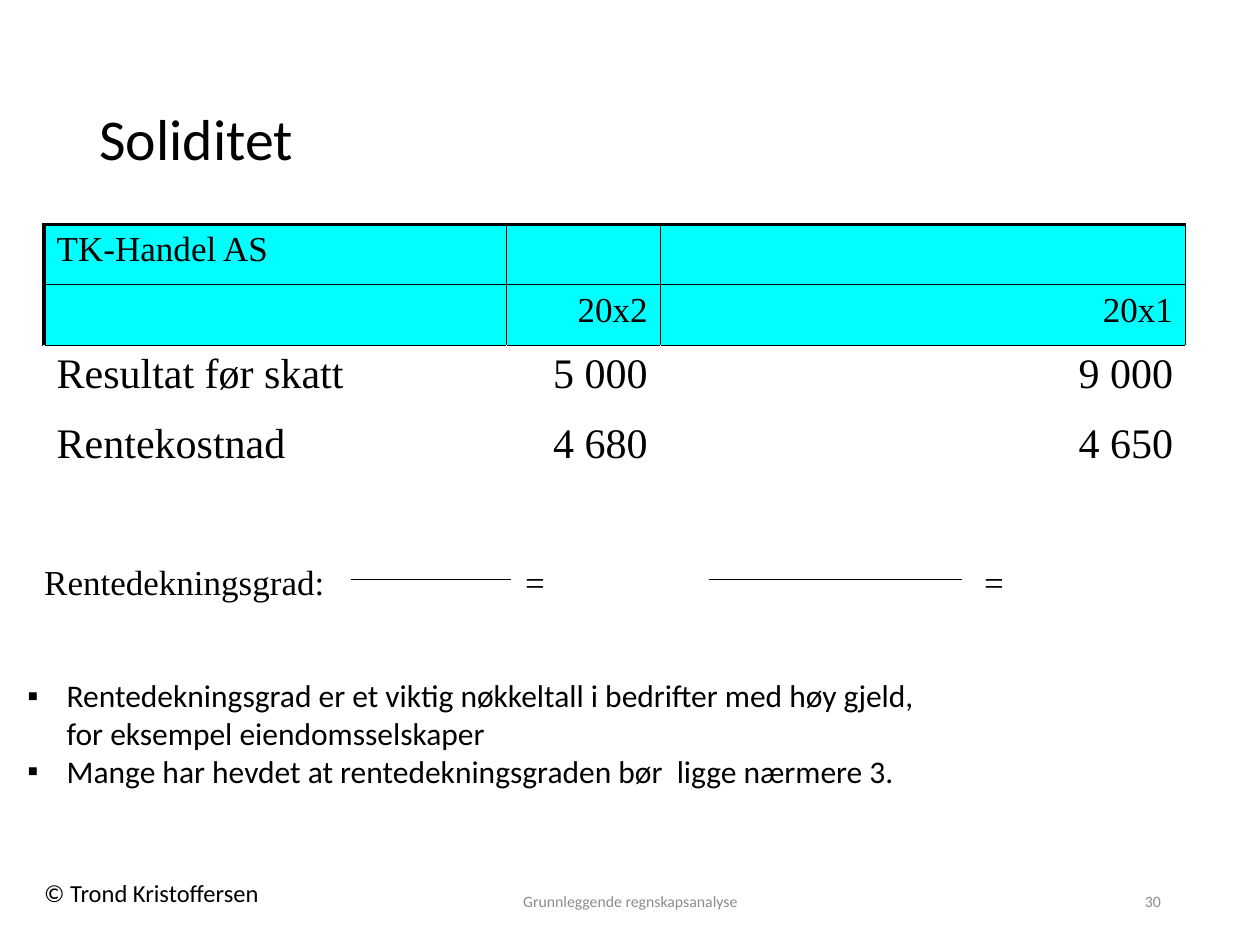
"""Build the slide about solidity and interest coverage."""
from lxml import etree
from pptx import Presentation, util as u
from pptx.dml.color import RGBColor
from pptx.enum import text
from pptx.oxml.ns import qn

COLORS = {"ink": "000000", "header": "00FFFF", "muted": "8C8C8C"}
ALIGN = text.PP_ALIGN
ANCHOR = text.MSO_ANCHOR


def write(para, words, size=18, font="Calibri", color="ink", align=ALIGN.LEFT, spacing=1.0):
    """Put formatted text in a paragraph."""
    para.text = words
    para.alignment = align
    para.line_spacing = spacing
    para.space_before = u.Pt(0)
    for span in para.runs:
        span.font.name = font
        span.font.size = u.Pt(size)
        span.font.color.rgb = RGBColor.from_string(COLORS[color])


class SlideBuilder:
    """Hold the style and the current slide."""

    def __init__(self, deck):
        self.serif = "Times New Roman"
        self.page = deck.slides.add_slide(deck.slide_layouts[1])

    def place(self, shape, left, top, width, height):
        """Move and size a shape in centimetres."""
        shape.left, shape.top = u.Cm(left), u.Cm(top)
        shape.width, shape.height = u.Cm(width), u.Cm(height)

    def title(self, words, *area):
        """Fill the title placeholder."""
        box = self.page.shapes.title
        self.place(box, *area)
        box.text_frame.auto_size = text.MSO_AUTO_SIZE.NONE
        box.text_frame.vertical_anchor = ANCHOR.MIDDLE
        write(box.text_frame.paragraphs[0], words, size=33, spacing=0.9)

    def bullets(self, items, *area):
        """Fill the body placeholder with a bulleted list."""
        box = self.page.placeholders[1]
        self.place(box, *area)
        frame = box.text_frame
        frame.auto_size = text.MSO_AUTO_SIZE.NONE
        frame.word_wrap = False
        for index, item in enumerate(items):
            para = frame.add_paragraph() if index else frame.paragraphs[0]
            write(para, item)
            props = para._p.get_or_add_pPr()
            indent = u.Cm(0.79)
            props.set("marL", str(indent))
            props.set("indent", str(-indent))
            etree.SubElement(props, qn("a:buChar")).set("char", "▪")

    def label(self, words, *area, wrap=True, anchor=ANCHOR.MIDDLE, **style):
        """Add a text box."""
        frame = self.page.shapes.add_textbox(*map(u.Cm, area)).text_frame
        frame.word_wrap = wrap
        frame.vertical_anchor = anchor
        write(frame.paragraphs[0], words, **style)

    def table(self, left, top, columns, rows):
        """Add an unstyled table with the given column and row sizes."""
        area = map(u.Cm, (left, top, sum(columns), sum(rows)))
        table = self.page.shapes.add_table(len(rows), len(columns), *area).table
        table.first_row = table.horz_banding = False
        for column, width in zip(table.columns, columns):
            column.width = u.Cm(width)
        for row, height in zip(table.rows, rows):
            row.height = u.Cm(height)
        for cell in table.iter_cells():
            cell.fill.background()
        return table

    def borders(self, cell, **widths):
        """Draw cell borders, given in points by side in the order L, R, T, B."""
        props = cell._tc.get_or_add_tcPr()
        for position, (side, width) in enumerate(widths.items()):
            line = etree.Element(qn(f"a:ln{side}"), w=str(u.Pt(width)))
            fill = etree.SubElement(line, qn("a:solidFill"))
            etree.SubElement(fill, qn("a:srgbClr")).set("val", COLORS["ink"])
            props.insert(position, line)

    def figures(self, rows):
        """Add the table of results and interest costs."""
        table = self.table(0.89, 4.52, (9.32, 3.1, 10.59), (1.22, 1.22, 1.4, 1.4))
        for r, row in enumerate(rows):
            for c, words in enumerate(row):
                cell = table.cell(r, c)
                if words:
                    write(cell.text_frame.paragraphs[0], words, size=20 if r < 2 else 24,
                          font=self.serif, align=ALIGN.RIGHT if c else ALIGN.LEFT)
                if r < 2:
                    cell.fill.solid()
                    cell.fill.fore_color.rgb = RGBColor.from_string(COLORS["header"])
                    self.borders(cell, L=1 if c else 2.25, R=1, T=1 if r else 2.25, B=1)
                elif r == 2:
                    self.borders(cell, T=1)

    def formula(self, words, fractions):
        """Add the formula grid, with a fraction line in the given columns."""
        columns = (6.2, 3.2, 0.99, 1.6, 1.42, 5.08, 1.32, 3.1)
        table = self.table(0.89, 10.92, columns, (0.76, 0.92))
        for cell in table.iter_cells():
            cell.margin_left = cell.margin_right = cell.margin_top = cell.margin_bottom = 0
            cell.vertical_anchor = ANCHOR.MIDDLE
            para = cell.text_frame.paragraphs[0]
            etree.SubElement(para._p, qn("a:endParaRPr")).set("sz", "800")
        for c in range(len(columns)):
            upper, lower = table.cell(0, c), table.cell(1, c)
            if c in fractions:
                self.borders(upper, B=1)
                self.borders(lower, T=1)
                continue
            upper.merge(lower)
            if c in words:
                write(upper.text_frame.paragraphs[0], words[c], size=20, font=self.serif,
                      align=ALIGN.CENTER if c else ALIGN.LEFT)


def main():
    """Build and save the deck."""
    deck = Presentation()
    deck.slide_width, deck.slide_height = u.Cm(25.4), u.Cm(19.05)
    slide = SlideBuilder(deck)
    slide.title("Soliditet", 1.75, 1.02, 21.89, 3.68)
    slide.label("© Trond Kristoffersen", 0.64, 17.58, 4.95, 0.84,
                wrap=False, anchor=ANCHOR.TOP, size=14)
    slide.label("Grunnleggende regnskapsanalyse", 8.41, 17.65, 8.59, 1.02,
                size=9, color="muted", align=ALIGN.CENTER)
    slide.label("30", 17.93, 17.65, 5.72, 1.02, size=9, color="muted", align=ALIGN.RIGHT)
    slide.figures([
        ("TK-Handel AS", "", ""),
        ("", "20x2", "20x1"),
        ("Resultat før skatt", "5 000", "9 000"),
        ("Rentekostnad", "4 680", "4 650"),
    ])
    slide.formula({0: "Rentedekningsgrad:", 2: "=", 6: "="}, fractions=(1, 5))
    slide.bullets([
        "Rentedekningsgrad er et viktig nøkkeltall i bedrifter med høy gjeld, \v"
        "for eksempel eiendomsselskaper",
        "Mange har hevdet at rentedekningsgraden bør  ligge nærmere 3.",
    ], 0.3, 13.51, 18.77, 3.33)
    deck.save("out.pptx")


if __name__ == "__main__":
    main()
